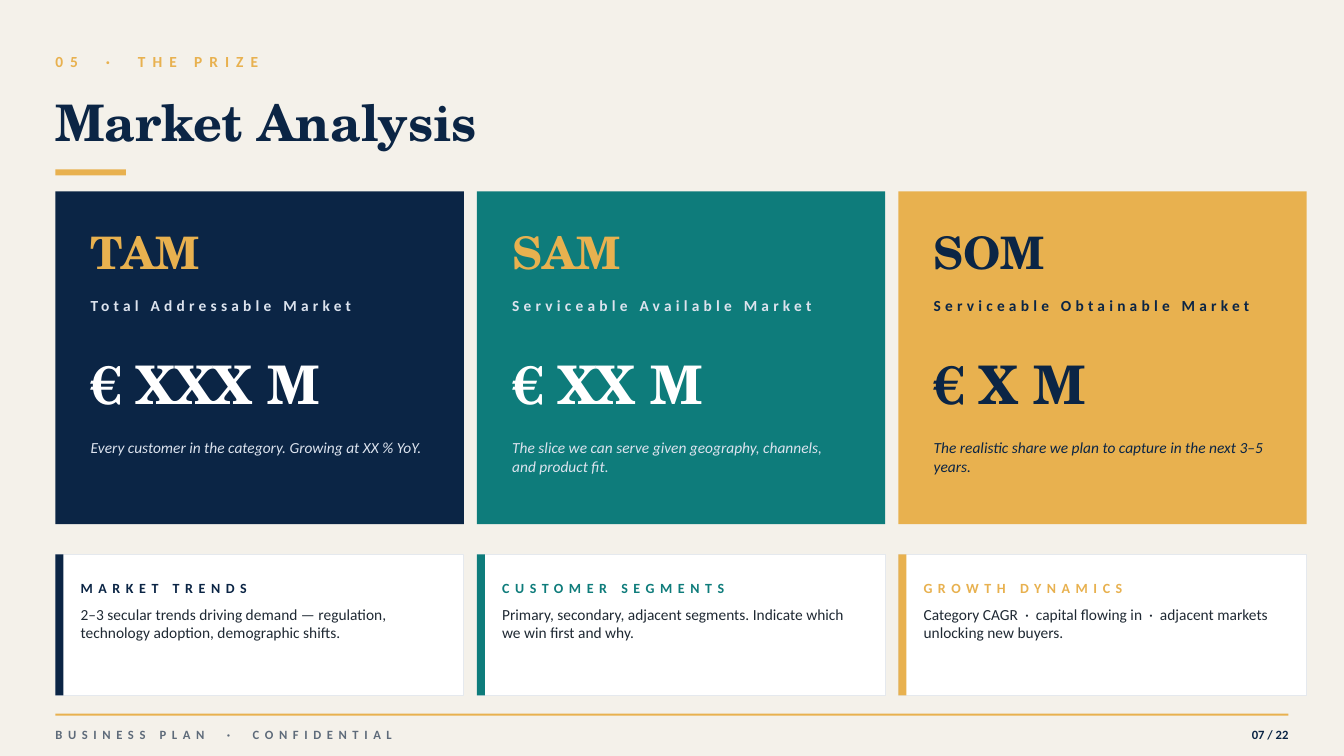
"""Build the Market Analysis slide with its market size and insight cards."""
from dataclasses import dataclass

from pptx import Presentation
from pptx.dml.color import RGBColor
from pptx.enum.shapes import MSO_SHAPE
from pptx.enum.text import MSO_ANCHOR, MSO_AUTO_SIZE, PP_ALIGN
from pptx.shapes.autoshape import Shape
from pptx.slide import Slide
from pptx.util import Emu, Pt

RECTANGLE = MSO_SHAPE.RECTANGLE
TOP, MIDDLE = MSO_ANCHOR.TOP, MSO_ANCHOR.MIDDLE
LEFT, RIGHT = PP_ALIGN.LEFT, PP_ALIGN.RIGHT
NO_AUTOFIT = MSO_AUTO_SIZE.NONE

EMU_PER_PX = 9144
SLIDE_WIDTH, SLIDE_HEIGHT = 1333, 750
MARGIN = 55
CARD_WIDTH, CARD_PITCH = 405, 418
SIZE_CARD_TOP, SIZE_CARD_HEIGHT, SIZE_CARD_INSET = 190, 330, 35
INSIGHT_TOP, INSIGHT_HEIGHT, INSIGHT_INSET = 550, 140, 25
TITLE_ONLY_LAYOUT = 5

SERIF, SANS = "TeX Gyre Schola", "Calibri"
COLORS = {
    "paper": "F4F1EA",
    "navy": "0B2545",
    "teal": "0E7C7B",
    "gold": "E8B14F",
    "white": "FFFFFF",
    "mist": "DCE3EE",
    "border": "E5E9EE",
    "ink": "1F2933",
    "slate": "5E6B7A",
}


@dataclass(frozen=True)
class Box:
    left: int
    top: int
    width: int
    height: int


@dataclass(frozen=True)
class TextStyle:
    size: int
    color: str
    font: str = SANS
    bold: bool = False
    italic: bool = False
    spacing: int = 0
    anchor: MSO_ANCHOR = MIDDLE
    alignment: PP_ALIGN = LEFT


@dataclass(frozen=True)
class MarketSize:
    acronym: str
    name: str
    value: str
    note: str
    fill: str
    acronym_color: str
    value_color: str
    text_color: str


@dataclass(frozen=True)
class Insight:
    heading: str
    body: str
    accent: str


MARKET_SIZES = [
    MarketSize("TAM", "Total Addressable Market", "€ XXX M",
               "Every customer in the category. Growing at XX % YoY.",
               "navy", "gold", "white", "mist"),
    MarketSize("SAM", "Serviceable Available Market", "€ XX M",
               "The slice we can serve given geography, channels, and product fit.",
               "teal", "gold", "white", "mist"),
    MarketSize("SOM", "Serviceable Obtainable Market", "€ X M",
               "The realistic share we plan to capture in the next 3–5 years.",
               "gold", "navy", "navy", "navy"),
]
INSIGHTS = [
    Insight("MARKET TRENDS",
            "2–3 secular trends driving demand — regulation, technology adoption, demographic shifts.",
            "navy"),
    Insight("CUSTOMER SEGMENTS",
            "Primary, secondary, adjacent segments. Indicate which we win first and why.",
            "teal"),
    Insight("GROWTH DYNAMICS",
            "Category CAGR  ·  capital flowing in  ·  adjacent markets unlocking new buyers.",
            "gold"),
]


def px(length: int) -> Emu:
    return Emu(length * EMU_PER_PX)


def rgb(name: str) -> RGBColor:
    return RGBColor.from_string(COLORS[name])


def place(shape: Shape, box: Box) -> None:
    shape.left, shape.top = px(box.left), px(box.top)
    shape.width, shape.height = px(box.width), px(box.height)


def write_text(shape: Shape, text: str, style: TextStyle) -> None:
    frame = shape.text_frame
    frame.text = text
    frame.word_wrap = True
    frame.auto_size = NO_AUTOFIT
    frame.vertical_anchor = style.anchor
    frame.margin_left = frame.margin_right = frame.margin_top = frame.margin_bottom = 0
    paragraph = frame.paragraphs[0]
    paragraph.alignment = style.alignment
    font = paragraph.font
    font.name, font.size = style.font, Pt(style.size)
    font.bold, font.italic = style.bold, style.italic
    font.color.rgb = rgb(style.color)
    if style.spacing:
        properties = paragraph._p.get_or_add_pPr().get_or_add_defRPr()
        properties.set("spc", str(style.spacing * 100))


def add_text(slide: Slide, box: Box, text: str, style: TextStyle) -> None:
    shape = slide.shapes.add_textbox(0, 0, 0, 0)
    place(shape, box)
    write_text(shape, text, style)


def add_rectangle(slide: Slide, box: Box, fill: str, border: str = "") -> None:
    shape = slide.shapes.add_shape(RECTANGLE, 0, 0, 0, 0)
    place(shape, box)
    shape.shadow.inherit = False
    shape.fill.solid()
    shape.fill.fore_color.rgb = rgb(fill)
    if border:
        shape.line.color.rgb = rgb(border)
        shape.line.width = Pt(0.5)
    else:
        shape.line.fill.background()


def add_market_size(slide: Slide, left: int, market: MarketSize) -> None:
    add_rectangle(slide, Box(left, SIZE_CARD_TOP, CARD_WIDTH, SIZE_CARD_HEIGHT), market.fill)
    text_left, width = left + SIZE_CARD_INSET, CARD_WIDTH - 2 * SIZE_CARD_INSET
    rows = [
        (220, 60, market.acronym, TextStyle(32, market.acronym_color, SERIF, bold=True)),
        (285, 35, market.name, TextStyle(11, market.text_color, bold=True, spacing=3)),
        (335, 90, market.value, TextStyle(38, market.value_color, SERIF, bold=True)),
        (435, 70, market.note, TextStyle(11, market.text_color, italic=True, anchor=TOP)),
    ]
    for top, height, text, style in rows:
        add_text(slide, Box(text_left, top, width, height), text, style)


def add_insight(slide: Slide, left: int, insight: Insight) -> None:
    add_rectangle(slide, Box(left, INSIGHT_TOP, CARD_WIDTH, INSIGHT_HEIGHT), "white", "border")
    add_rectangle(slide, Box(left, INSIGHT_TOP, 8, INSIGHT_HEIGHT), insight.accent)
    text_left, width = left + INSIGHT_INSET, CARD_WIDTH - 2 * INSIGHT_INSET
    add_text(slide, Box(text_left, 568, width, 30), insight.heading,
             TextStyle(10, insight.accent, bold=True, spacing=4))
    add_text(slide, Box(text_left, 600, width, 75), insight.body,
             TextStyle(11, "ink", anchor=TOP))


def main() -> None:
    presentation = Presentation()
    presentation.slide_width, presentation.slide_height = px(SLIDE_WIDTH), px(SLIDE_HEIGHT)
    slide = presentation.slides.add_slide(presentation.slide_layouts[TITLE_ONLY_LAYOUT])
    slide.background.fill.solid()
    slide.background.fill.fore_color.rgb = rgb("paper")

    add_text(slide, Box(MARGIN, 45, 1000, 32), "05  ·  THE PRIZE",
             TextStyle(11, "gold", bold=True, spacing=5))
    place(slide.shapes.title, Box(MARGIN, 78, 1230, 85))
    write_text(slide.shapes.title, "Market Analysis", TextStyle(36, "navy", SERIF, bold=True))
    add_rectangle(slide, Box(MARGIN, 168, 70, 6), "gold")

    for column, (market, insight) in enumerate(zip(MARKET_SIZES, INSIGHTS)):
        left = MARGIN + column * CARD_PITCH
        add_market_size(slide, left, market)
        add_insight(slide, left, insight)

    add_rectangle(slide, Box(MARGIN, 708, 1223, 2), "gold")
    add_text(slide, Box(MARGIN, 715, 600, 28), "BUSINESS PLAN  ·  CONFIDENTIAL",
             TextStyle(9, "slate", bold=True, spacing=4))
    add_text(slide, Box(1178, 715, 100, 28), "07 / 22",
             TextStyle(9, "navy", bold=True, alignment=RIGHT))
    presentation.save("out.pptx")


if __name__ == "__main__":
    main()
